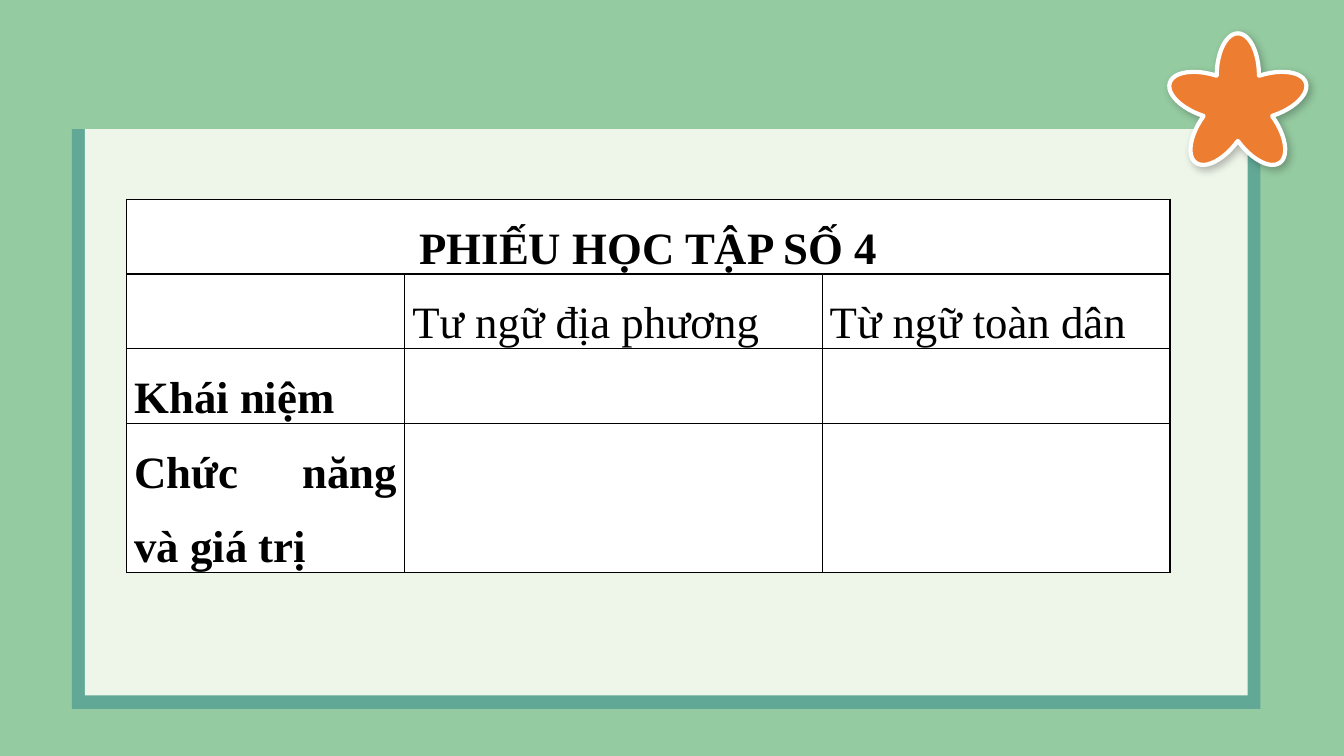
import math

from lxml import etree
from pptx import Presentation
from pptx import util as u
from pptx.dml.color import RGBColor
from pptx.enum import shapes, text
from pptx.oxml import ns, parse_xml

COLORS = {
    "green": "95CBA1",
    "teal": "62A896",
    "cream": "EEF5E9",
    "orange": "ED7D31",
    "white": "FFFFFF",
    "black": "000000",
}
FONT = "Times New Roman"
COLUMN_WIDTHS = [198.7, 298.1, 248.4]
ROW_HEIGHTS = [52.1, 52.1, 52.1, 104.2]
WORKSHEET = [
    ["PHIẾU HỌC TẬP SỐ 4", "", ""],
    ["", "Tư ngữ địa phương", "Từ ngữ toàn dân"],
    ["Khái niệm", "", ""],
    ["Chức năng và giá trị", "", ""],
]


def rgb(name):
    return RGBColor.from_string(COLORS[name])


def add_panel(slide, color, left, top, width, height):
    sp = slide.shapes.add_shape(
        shapes.MSO_SHAPE.RECTANGLE,
        u.Pt(left), u.Pt(top), u.Pt(width), u.Pt(height))
    sp.shadow.inherit = False
    sp.fill.solid()
    sp.fill.fore_color.rgb = rgb(color)
    sp.line.fill.background()


def flower_points(cx, cy, petals=5, steps=24):
    half_width, base, length = 15.1, 20.9, 30.2
    points = []
    for petal in range(petals):
        turn = 2 * math.pi * petal / petals
        for step in range(steps + 1):
            t = math.pi * (1 - step / steps)
            x = half_width * math.cos(t)
            y = -base - length * math.sin(t)
            points.append((
                u.Pt(cx + x * math.cos(turn) - y * math.sin(turn)),
                u.Pt(cy + x * math.sin(turn) + y * math.cos(turn))))
    return points


def add_shadow(sp, alpha, blur, distance, angle):
    sp.shadow.inherit = False
    effects = sp._element.spPr.find(ns.qn("a:effectLst"))
    effects.append(parse_xml(
        f'<a:outerShdw {ns.nsdecls("a")} blurRad="{u.Pt(blur)}" '
        f'dist="{u.Pt(distance)}" dir="{angle * 60000}" algn="tl" rotWithShape="0">'
        f'<a:srgbClr val="{COLORS["black"]}"><a:alpha val="{alpha * 1000}"/>'
        f'</a:srgbClr></a:outerShdw>'))


def add_flower(slide, cx, cy):
    points = flower_points(cx, cy)
    builder = slide.shapes.build_freeform(*points[0])
    builder.add_line_segments(points[1:], close=True)
    sp = builder.convert_to_shape()
    sp.fill.solid()
    sp.fill.fore_color.rgb = rgb("orange")
    sp.line.color.rgb = rgb("white")
    sp.line.width = u.Pt(3)
    add_shadow(sp, alpha=25, blur=6, distance=3, angle=45)


def set_borders(cell, color, width):
    tc_pr = cell._tc.get_or_add_tcPr()
    for side in ("lnL", "lnR", "lnT", "lnB"):
        ln = etree.SubElement(tc_pr, ns.qn(f"a:{side}"), w=str(u.Pt(width)))
        fill = etree.SubElement(ln, ns.qn("a:solidFill"))
        etree.SubElement(fill, ns.qn("a:srgbClr"), val=COLORS[color])


def format_cell(cell):
    cell.margin_left = cell.margin_right = u.Pt(5.4)
    cell.margin_top = cell.margin_bottom = 0
    set_borders(cell, "black", 1)
    cell.fill.solid()
    cell.fill.fore_color.rgb = rgb("white")


def write_cell(cell, words, bold, align):
    p = cell.text_frame.paragraphs[0]
    p.alignment = align
    p.line_spacing = 1.5
    r = p.add_run()
    r.text = words
    r.font.name = FONT
    r.font.size = u.Pt(32)
    r.font.bold = bold
    r.font.color.rgb = rgb("black")


def add_worksheet(slide, left, top):
    frame = slide.shapes.add_table(
        len(ROW_HEIGHTS), len(COLUMN_WIDTHS), u.Pt(left), u.Pt(top),
        u.Pt(sum(COLUMN_WIDTHS)), u.Pt(sum(ROW_HEIGHTS)))
    table = frame.table
    table.first_row = table.horz_banding = False
    for column, width in zip(table.columns, COLUMN_WIDTHS):
        column.width = u.Pt(width)
    for row, height in zip(table.rows, ROW_HEIGHTS):
        row.height = u.Pt(height)
    table.cell(0, 0).merge(table.cell(0, len(COLUMN_WIDTHS) - 1))
    for i, row in enumerate(WORKSHEET):
        for j, words in enumerate(row):
            cell = table.cell(i, j)
            format_cell(cell)
            if words:
                align = text.PP_ALIGN.JUSTIFY if i else text.PP_ALIGN.CENTER
                write_cell(cell, words, j == 0, align)


def main():
    prs = Presentation()
    prs.slide_width, prs.slide_height = u.Pt(960), u.Pt(540)
    slide = prs.slides.add_slide(prs.slide_layouts[6])
    add_panel(slide, "green", 0, 0, 960, 540)
    add_panel(slide, "teal", 51.3, 92.3, 849, 414)
    add_panel(slide, "cream", 60.6, 92.3, 830.6, 404.4)
    add_flower(slide, 884.2, 74.9)
    add_worksheet(slide, 90.5, 142.3)
    prs.save("out.pptx")


if __name__ == "__main__":
    main()
